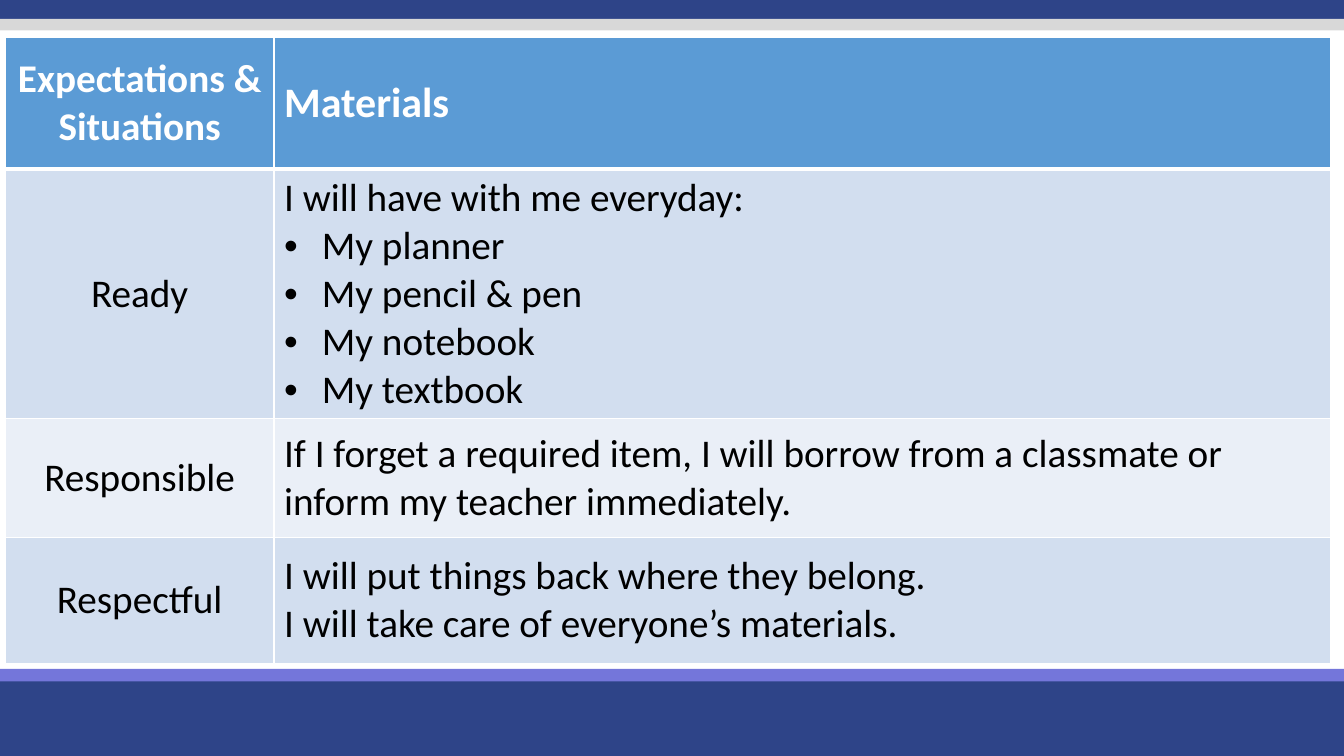
from lxml.etree import SubElement as Sub
from pptx import Presentation as Deck
from pptx.dml.color import RGBColor as Rgb
from pptx.enum.shapes import MSO_SHAPE as Kind
from pptx.enum.text import MSO_ANCHOR as Anchor, PP_ALIGN as Align
from pptx.oxml.ns import qn
from pptx.util import Emu, Pt

NAVY = Rgb(0x2E, 0x44, 0x88)
VIOLET = Rgb(0x74, 0x76, 0xDA)
GREY = Rgb(0xD8, 0xD8, 0xD8)
BLUE = Rgb(0x5B, 0x9B, 0xD5)
PALE = Rgb(0xD2, 0xDE, 0xEF)
LIGHT = Rgb(0xEA, 0xEF, 0xF7)
WHITE = Rgb(0xFF, 0xFF, 0xFF)
BLACK = Rgb(0x00, 0x00, 0x00)

BARS = [
    (643, 77, NAVY),
    (637, 12, VIOLET),
    (-3, 21, NAVY),
    (18, 11, GREY),
]
WIDTHS = [256, 1006]
HEIGHTS = [125, 204, 113, 120]
ROWS = [
    ("Expectations & Situations", ["Materials"]),
    ("Ready", ["I will have with me everyday:", "• My planner",
               "• My pencil & pen", "• My notebook", "• My textbook"]),
    ("Responsible", ["If I forget a required item, I will borrow from "
                     "a classmate or inform my teacher immediately."]),
    ("Respectful", ["I will put things back where they belong.",
                    "I will take care of everyone’s materials."]),
]


def px(num):
    return Emu(num * 9525)


def style(item, form):
    for name, value in form.items():
        setattr(item, name, value)


def paint(node, color):
    fill = Sub(node, qn("a:solidFill"))
    Sub(fill, qn("a:srgbClr"), val=str(color))


def add_bar(slide, top, height, color):
    bar = slide.shapes.add_shape(Kind.RECTANGLE, 0, px(top), px(1280), px(height))
    bar.shadow.inherit = False
    bar.fill.solid()
    bar.fill.fore_color.rgb = color
    bar.line.fill.background()


def add_edge(cell, side, width):
    edge = Sub(cell._tc.get_or_add_tcPr(), qn("a:ln" + side), w=str(Pt(width)))
    paint(edge, WHITE)


def add_dot(para):
    props = para._p.get_or_add_pPr()
    props.set("marL", str(px(36)))
    props.set("indent", str(px(-36)))
    paint_node = Sub(props, qn("a:buClr"))
    Sub(paint_node, qn("a:srgbClr"), val=str(BLACK))
    Sub(props, qn("a:buFont"), typeface="Arial")
    Sub(props, qn("a:buChar"), char="•")


def add_text(cell, lines, align, form, color):
    frame = cell.text_frame
    for spot, line in enumerate(lines):
        para = frame.add_paragraph() if spot else frame.paragraphs[0]
        para.alignment = align
        if line.startswith("• "):
            add_dot(para)
        run = para.add_run()
        run.text = line.removeprefix("• ")
        style(run.font, form)
        run.font.color.rgb = color


def fill_cell(cell, row, col, lines):
    head = row == 0
    edges = {"L": 1, "R": 1, "T": 3 if row == 1 else 1, "B": 3 if head else 1}
    for side, width in edges.items():
        add_edge(cell, side, width)
    cell.vertical_anchor = Anchor.MIDDLE
    cell.fill.solid()
    cell.fill.fore_color.rgb = BLUE if head else PALE if row % 2 else LIGHT
    form = {"name": "Calibri", "size": Pt(30 if head and col else 28), "bold": head}
    align = Align.LEFT if col else Align.CENTER
    add_text(cell, lines, align, form, WHITE if head else BLACK)


def add_grid(slide):
    frame = slide.shapes.add_table(len(ROWS), len(WIDTHS), px(5), px(36),
                                   px(sum(WIDTHS)), px(sum(HEIGHTS)))
    grid = frame.table
    for col, width in zip(grid.columns, WIDTHS):
        col.width = px(width)
    for row, height in zip(grid.rows, HEIGHTS):
        row.height = px(height)
    for row, (label, lines) in enumerate(ROWS):
        for col, texts in enumerate(([label], lines)):
            fill_cell(grid.cell(row, col), row, col, texts)


def main():
    deck = Deck()
    style(deck, {"slide_width": px(1280), "slide_height": px(720)})
    slide = deck.slides.add_slide(deck.slide_layouts[6])
    for top, height, color in BARS:
        add_bar(slide, top, height, color)
    add_grid(slide)
    deck.save("out.pptx")


if __name__ == "__main__":
    main()
